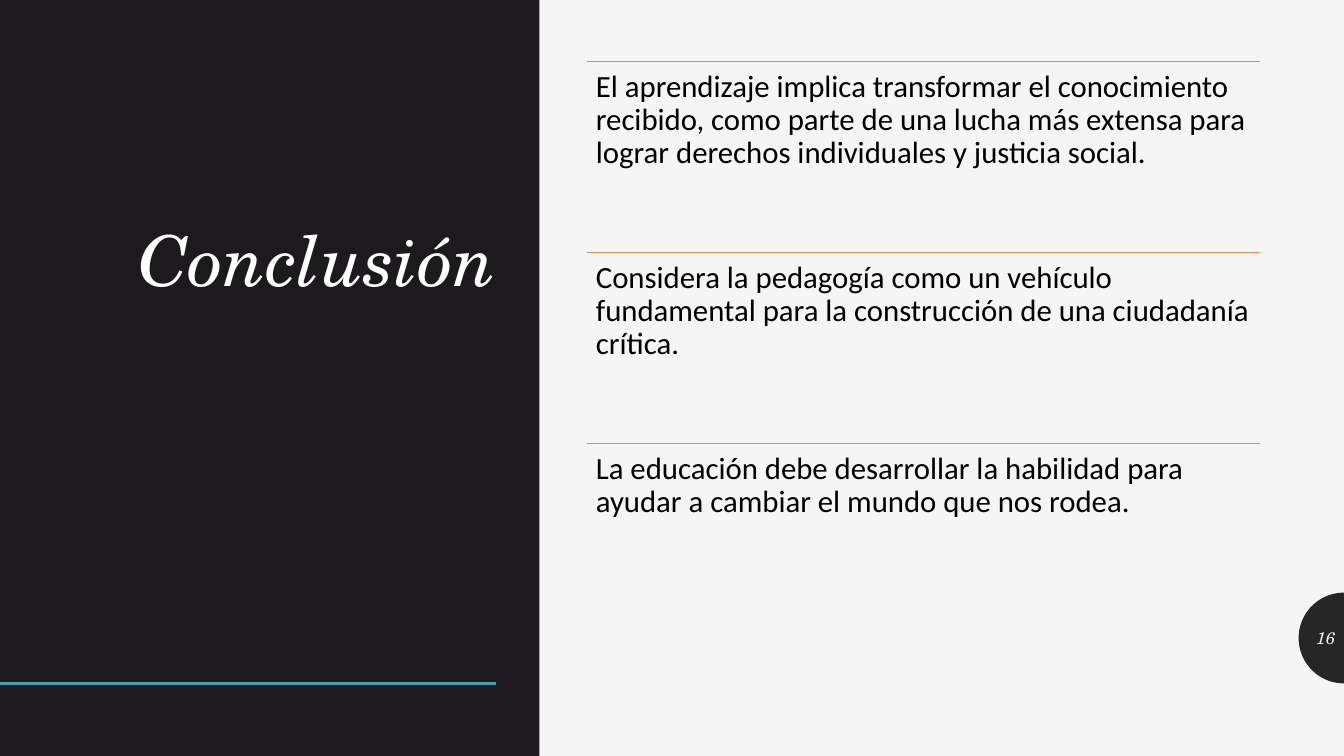
from dataclasses import dataclass
from math import cos, pi, sin

from lxml.etree import SubElement
from pptx import Presentation
from pptx.dml.color import RGBColor
from pptx.enum.shapes import MSO_CONNECTOR, MSO_SHAPE
from pptx.enum.text import MSO_ANCHOR, PP_ALIGN
from pptx.oxml.ns import qn
from pptx.util import Inches, Pt

PAGE_WIDTH, PAGE_HEIGHT = 13.33, 7.5
HEADING_FONT, BODY_FONT = "TeX Gyre Schola", "Calibri"
BADGE_RADIUS, BADGE_CENTER = 0.45, 6.33
LIST_LEFT, LIST_TOP, LIST_WIDTH, ROW_HEIGHT = 5.82, 0.61, 6.68, 1.895
CONCLUSIONS = [
    "El aprendizaje implica transformar el conocimiento recibido, como parte de "
    "una lucha más extensa para lograr derechos individuales y justicia social.",
    "Considera la pedagogía como un vehículo fundamental para la construcción "
    "de una ciudadanía crítica.",
    "La educación debe desarrollar la habilidad para ayudar a cambiar el mundo "
    "que nos rodea.",
]


@dataclass
class Rule:
    left: float
    top: float
    width: float
    color: str
    weight: float


@dataclass
class TextBlock:
    text: str
    left: float
    top: float
    width: float
    height: float
    font: dict
    paragraph: dict
    frame: dict


def rgb(color: str) -> RGBColor:
    return RGBColor.from_string(color)


def apply_format(target, values: dict) -> None:
    for name, value in values.items():
        setattr(target, name, value)


def paint(shape, color: str) -> None:
    """Give the shape a plain fill without outline or shadow."""
    shape.fill.solid()
    shape.fill.fore_color.rgb = rgb(color)
    shape.line.fill.background()
    shape.shadow.inherit = False


def draw_rule(page, rule: Rule) -> None:
    top = Inches(rule.top)
    connector = page.shapes.add_connector(
        MSO_CONNECTOR.STRAIGHT, Inches(rule.left), top, Inches(rule.left + rule.width), top
    )
    connector.line.color.rgb = rgb(rule.color)
    connector.line.width = Pt(rule.weight)
    SubElement(connector._element.spPr, qn("a:effectLst"))


def draw_text(page, block: TextBlock, color: str) -> None:
    box = page.shapes.add_textbox(
        Inches(block.left), Inches(block.top), Inches(block.width), Inches(block.height)
    )
    apply_format(box.text_frame, {"word_wrap": True, **block.frame})
    para = box.text_frame.paragraphs[0]
    apply_format(para, block.paragraph)
    span = para.add_run()
    span.text = block.text
    apply_format(span.font, block.font)
    span.font.color.rgb = rgb(color)


def draw_badge(page) -> None:
    """Draw the half disc at the right edge that carries the page number."""
    steps = 48
    angles = [pi * step / steps for step in range(steps + 1)]
    points = [
        (Inches(PAGE_WIDTH - BADGE_RADIUS * sin(angle)),
         Inches(BADGE_CENTER - BADGE_RADIUS * cos(angle)))
        for angle in angles
    ]
    builder = page.shapes.build_freeform(*points[0])
    builder.add_line_segments(points[1:], close=True)
    paint(builder.convert_to_shape(), "262626")


def main() -> None:
    deck = Presentation()
    deck.slide_width, deck.slide_height = Inches(PAGE_WIDTH), Inches(PAGE_HEIGHT)
    page = deck.slides.add_slide(deck.slide_layouts[6])
    page.background.fill.solid()
    page.background.fill.fore_color.rgb = rgb("F5F5F5")

    draw_badge(page)
    panel = page.shapes.add_shape(MSO_SHAPE.RECTANGLE, 0, 0, Inches(5.35), Inches(PAGE_HEIGHT))
    paint(panel, "1D1A1D")
    draw_rule(page, Rule(0, 6.78, 4.92, "439EB7", 2))

    heading_font = {"name": HEADING_FONT, "italic": True}
    title = TextBlock(
        "Conclusión", 0.83, 0.61, 4.19, 2.43,
        font={**heading_font, "size": Pt(50)},
        paragraph={"alignment": PP_ALIGN.RIGHT, "line_spacing": 0.9},
        frame={"vertical_anchor": MSO_ANCHOR.BOTTOM},
    )
    draw_text(page, title, "FFFFFF")
    page_number = TextBlock(
        "16", 12.89, 6.13, 0.45, 0.4,
        font={**heading_font, "size": Pt(12)},
        paragraph={"alignment": PP_ALIGN.RIGHT, "space_after": Pt(6)},
        frame={"vertical_anchor": MSO_ANCHOR.MIDDLE},
    )
    draw_text(page, page_number, "F5F5F5")

    sides = ("left", "top", "right", "bottom")
    insets = {f"margin_{side}": Inches(0.09) for side in sides}
    for row, conclusion in enumerate(CONCLUSIONS):
        top = LIST_TOP + row * ROW_HEIGHT
        draw_rule(page, Rule(LIST_LEFT, top, LIST_WIDTH, "E28B55", 1))
        block = TextBlock(
            conclusion, LIST_LEFT, top, LIST_WIDTH, ROW_HEIGHT,
            font={"name": BODY_FONT, "size": Pt(22)},
            paragraph={"alignment": PP_ALIGN.LEFT, "line_spacing": 0.9},
            frame={"vertical_anchor": MSO_ANCHOR.TOP, **insets},
        )
        draw_text(page, block, "000000")

    deck.save("out.pptx")


if __name__ == "__main__":
    main()
